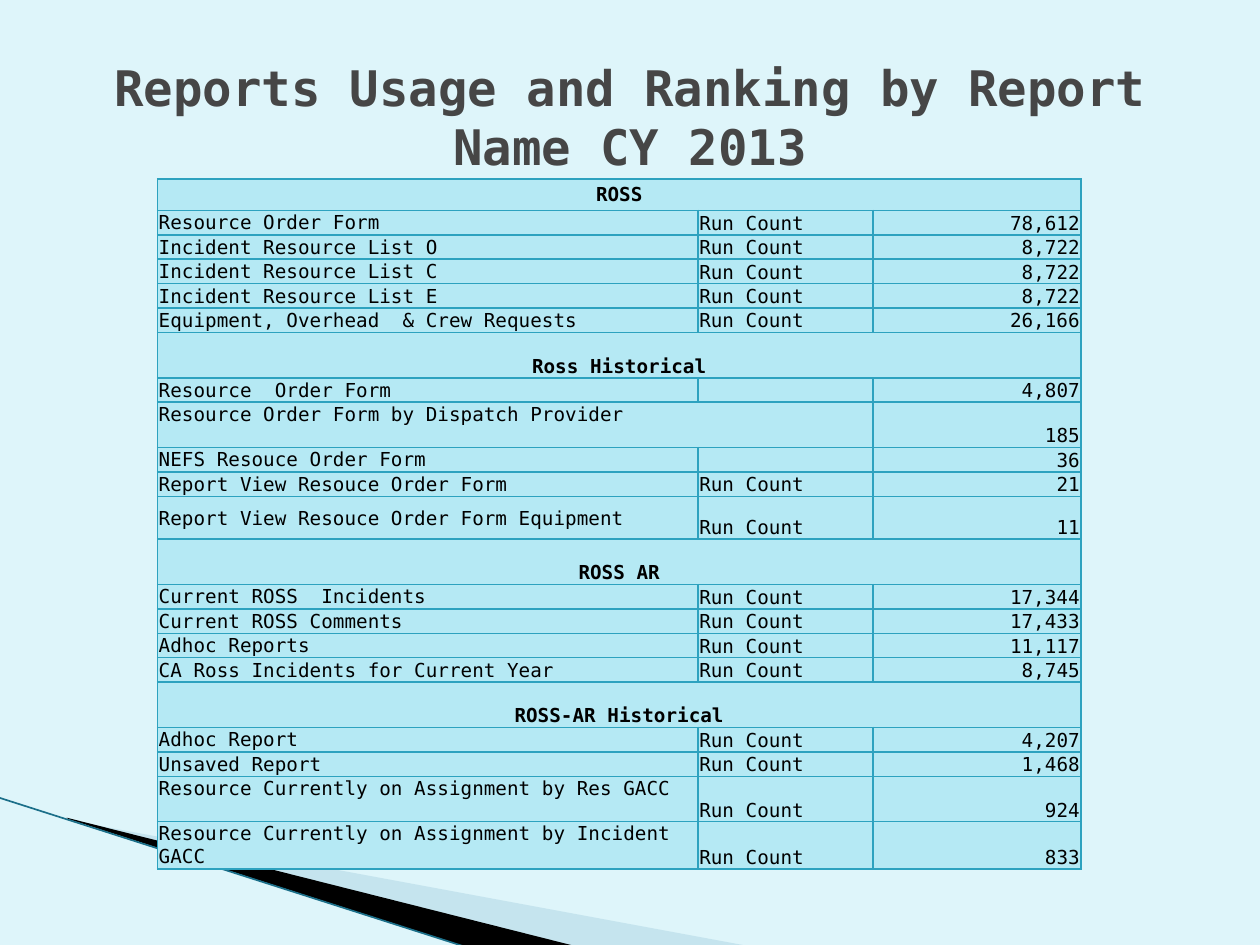
import lxml.etree
import pptx
import pptx.dml.color
import pptx.enum.shapes
import pptx.enum.text
import pptx.oxml.ns
import pptx.util

Inches = pptx.util.Inches
Pt = pptx.util.Pt
ALIGN = pptx.enum.text.PP_ALIGN
ANCHOR = pptx.enum.text.MSO_ANCHOR
qn = pptx.oxml.ns.qn

FONT = "DejaVu Sans Mono"
COLORS = {
    "background": "DEF5FA",
    "title": "464646",
    "text": "000000",
    "cell": "B5E9F4",
    "border": "2DA2BF",
    "pale wedge": "A0CBDC",
    "dark wedge": "000000",
    "edge": "1B6F89",
}
COLUMN_WIDTHS = (4.29, 1.39, 1.65)
HEADER, SECTION, LINE, TALL = 0.25, 0.36, 0.19, 0.34
RUN = "Run Count"

# Each section: heading, heading height, rows of (report, label, count, height)
SECTIONS = [
    ("ROSS", HEADER, [
        ("Resource Order Form", RUN, "78,612", LINE),
        ("Incident Resource List O", RUN, "8,722", LINE),
        ("Incident Resource List C", RUN, "8,722", LINE),
        ("Incident Resource List E", RUN, "8,722", LINE),
        ("Equipment, Overhead  & Crew Requests", RUN, "26,166", LINE),
    ]),
    ("Ross Historical", SECTION, [
        ("Resource  Order Form", "", "4,807", LINE),
        ("Resource Order Form by Dispatch Provider", None, "185", SECTION),
        ("NEFS Resouce Order Form", "", "36", LINE),
        ("Report View Resouce Order Form", RUN, "21", LINE),
        ("Report View Resouce Order Form Equipment", RUN, "11", TALL),
    ]),
    ("ROSS AR", SECTION, [
        ("Current ROSS  Incidents", RUN, "17,344", LINE),
        ("Current ROSS Comments", RUN, "17,433", LINE),
        ("Adhoc Reports", RUN, "11,117", LINE),
        ("CA Ross Incidents for Current Year", RUN, "8,745", LINE),
    ]),
    ("ROSS-AR Historical", SECTION, [
        ("Adhoc Report", RUN, "4,207", LINE),
        ("Unsaved Report", RUN, "1,468", LINE),
        ("Resource Currently on Assignment by Res GACC", RUN, "924", SECTION),
        ("Resource Currently on Assignment by Incident GACC", RUN, "833", SECTION),
    ]),
]


def rgb(name):
    return pptx.dml.color.RGBColor.from_string(COLORS[name])


def write_text(frame, text, size=11, color="text", bold=False, align=ALIGN.LEFT):
    paragraph = frame.paragraphs[0]
    paragraph.alignment = align
    if not text:
        # An empty paragraph keeps its line height through its end mark
        lxml.etree.SubElement(paragraph._p, qn("a:endParaRPr"), sz=str(size * 100))
        return
    span = paragraph.add_run()
    span.text = text
    span.font.name = FONT
    span.font.size = Pt(size)
    span.font.bold = bold
    span.font.color.rgb = rgb(color)


def add_wedge(page, points, color, alpha=None):
    start, *rest = [(Inches(x), Inches(y)) for x, y in points]
    builder = page.shapes.build_freeform(*start)
    builder.add_line_segments(rest, close=True)
    wedge = builder.convert_to_shape()
    wedge.shadow.inherit = False
    wedge.fill.solid()
    wedge.fill.fore_color.rgb = rgb(color)
    wedge.line.fill.background()
    if alpha is not None:
        tint = wedge.fill._xPr.find(".//" + qn("a:srgbClr"))
        lxml.etree.SubElement(tint, qn("a:alpha"), val=str(alpha * 1000))


def add_corner_decoration(page, left, top):
    """Place the two wedges and the edge line that sweep from (left, top)."""
    def place(*offsets):
        return [(left + x, top + y) for x, y in offsets]

    add_wedge(page, place((0.56, 0.18), (5.96, 1.18), (4.57, 1.18), (0.56, 0.17)),
              "pale wedge", alpha=40)
    add_wedge(page, place((0.54, 0.16), (4.58, 1.18), (3.73, 1.19), (0.55, 0.17)),
              "dark wedge")
    (x1, y1), (x2, y2) = place((0, 0), (3.72, 1.19))
    edge = page.shapes.add_connector(
        pptx.enum.shapes.MSO_CONNECTOR.STRAIGHT,
        Inches(x1), Inches(y1), Inches(x2), Inches(y2))
    edge.line.color.rgb = rgb("edge")
    edge.line.width = Pt(0.95)
    lxml.etree.SubElement(edge._element.spPr, qn("a:effectLst"))


def add_title(page, left, top, width, height):
    box = page.shapes.add_textbox(Inches(left), Inches(top), Inches(width), Inches(height))
    box.text_frame.word_wrap = True
    box.text_frame.vertical_anchor = ANCHOR.MIDDLE
    write_text(box.text_frame, "Reports Usage and Ranking by Report Name CY 2013",
               size=28, color="title", bold=True, align=ALIGN.CENTER)


def fill_cell(cell, text, anchor=ANCHOR.BOTTOM, **text_format):
    cell.margin_left = cell.margin_top = cell.margin_right = Inches(0.01)
    cell.margin_bottom = 0
    cell.vertical_anchor = anchor
    properties = cell._tc.get_or_add_tcPr()
    for side in ("a:lnL", "a:lnR", "a:lnT", "a:lnB"):
        border = lxml.etree.SubElement(properties, qn(side), w=str(Pt(1)))
        solid = lxml.etree.SubElement(border, qn("a:solidFill"))
        lxml.etree.SubElement(solid, qn("a:srgbClr"), val=COLORS["border"])
    cell.fill.solid()
    cell.fill.fore_color.rgb = rgb("cell")
    write_text(cell.text_frame, text, **text_format)


def add_section(table, first, heading, height, reports):
    """Fill the rows from index first on and return the next free index."""
    table.rows[first].height = Inches(height)
    anchor = ANCHOR.MIDDLE if height == HEADER else ANCHOR.BOTTOM
    for column, text in enumerate((heading, "", "")):
        fill_cell(table.cell(first, column), text, anchor, bold=True, align=ALIGN.CENTER)
    table.cell(first, 0).merge(table.cell(first, 2))

    for row, (report, label, count, row_height) in enumerate(reports, first + 1):
        table.rows[row].height = Inches(row_height)
        name_anchor = ANCHOR.TOP if row_height == SECTION else ANCHOR.MIDDLE
        fill_cell(table.cell(row, 0), report, name_anchor)
        fill_cell(table.cell(row, 1), label)
        fill_cell(table.cell(row, 2), count, align=ALIGN.RIGHT)
        if label is None:
            table.cell(row, 0).merge(table.cell(row, 1))
    return first + 1 + len(reports)


def add_usage_table(page, left, top):
    row_count = sum(1 + len(reports) for _, _, reports in SECTIONS)
    table = page.shapes.add_table(
        row_count, len(COLUMN_WIDTHS), Inches(left), Inches(top),
        Inches(sum(COLUMN_WIDTHS)), Inches(LINE * row_count)).table
    table.first_row = table.horz_banding = False
    for column, width in zip(table.columns, COLUMN_WIDTHS):
        column.width = Inches(width)
    row = 0
    for section in SECTIONS:
        row = add_section(table, row, *section)


def main():
    deck = pptx.Presentation()
    deck.slide_width, deck.slide_height = Inches(10), Inches(7.5)
    page = deck.slides.add_slide(deck.slide_layouts[6])
    page.background.fill.solid()
    page.background.fill.fore_color.rgb = rgb("background")
    add_corner_decoration(page, -0.01, 6.33)
    add_title(page, 0.5, 0.3, 9, 1.25)
    add_usage_table(page, 1.25, 1.42)
    deck.save("out.pptx")


if __name__ == "__main__":
    main()
